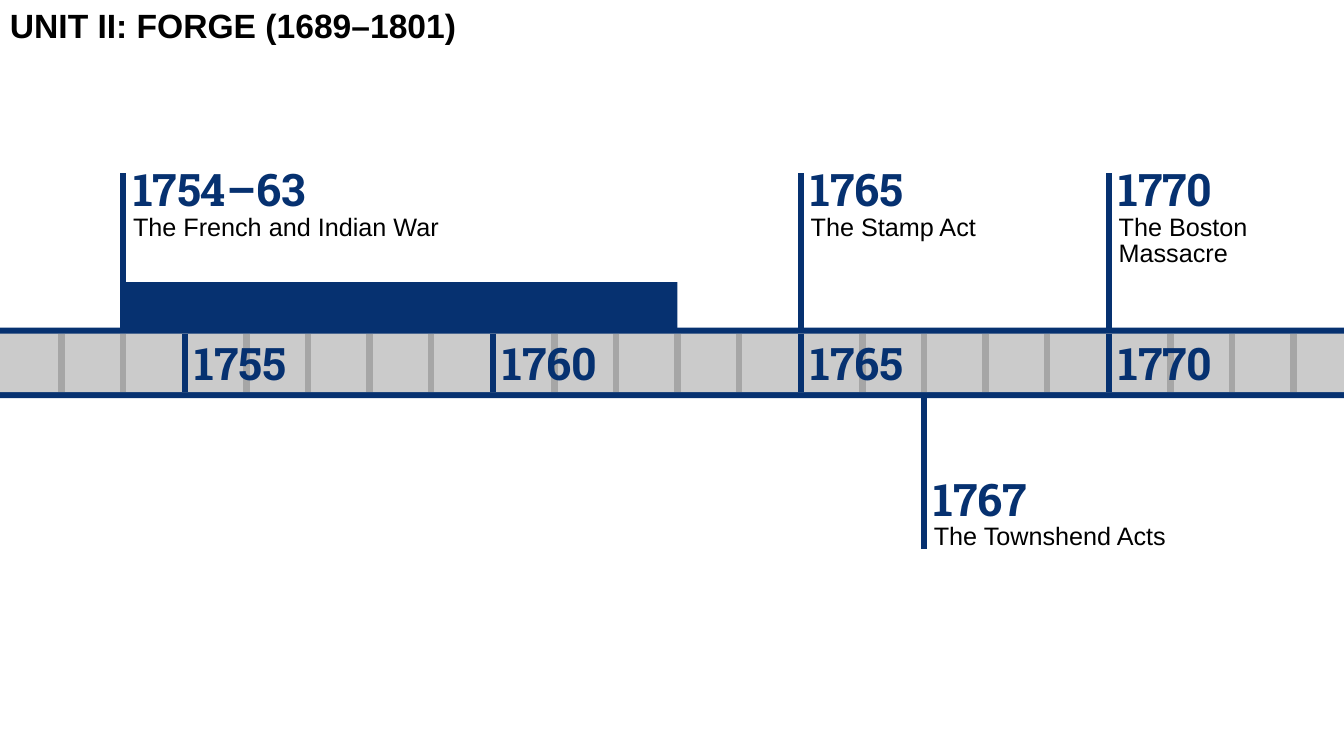
from lxml import etree
from pptx import Presentation
from pptx.dml.color import RGBColor
from pptx.enum import shapes, text
from pptx.oxml.ns import qn
from pptx.util import Pt

HUES = {"navy": "063170", "band": "CBCBCB", "tick": "A6A6A6", "ink": "000000"}
YEAR = ("Roboto Slab", 32, "navy", True)
NOTE = ("Arial", 18, "ink", False)
HEAD = ("Arial", 24, "ink", True)
WIDE, HIGH = 960, 540
START, STEP = 1752, 44
TOP, BASE = 238.3, 280.1


def place(year):
    """Horizontal position of a year on the time axis."""
    return (year - START) * STEP


class Board:
    def __init__(self, slide):
        self.items = slide.shapes

    def hue(self, name):
        return RGBColor.from_string(HUES[name])

    def bar(self, x, y, w, h, fill):
        box = self.items.add_shape(
            shapes.MSO_SHAPE.RECTANGLE, Pt(x), Pt(y), Pt(w), Pt(h))
        box.shadow.inherit = False
        box.fill.solid()
        box.fill.fore_color.rgb = self.hue(fill)
        box.line.fill.background()

    def rule(self, x, top, base, tint):
        """Vertical line at x."""
        line = self.items.add_connector(
            shapes.MSO_CONNECTOR.STRAIGHT, Pt(x), Pt(top), Pt(x), Pt(base))
        line.line.width = Pt(4.5)
        line.line.color.rgb = self.hue(tint)
        etree.SubElement(line._element.spPr, qn("a:effectLst"))

    def label(self, x, y, w, h, parts, space=None, wrap=False):
        """Text box with one paragraph for each (words, style) pair."""
        frame = self.items.add_textbox(Pt(x), Pt(y), Pt(w), Pt(h)).text_frame
        frame.word_wrap = wrap
        frame.auto_size = text.MSO_AUTO_SIZE.SHAPE_TO_FIT_TEXT
        frame.text = "\n".join(words for words, style in parts)
        for para, (words, style) in zip(frame.paragraphs, parts):
            if space:
                para.line_spacing = space
            face, size, tint, bold = style
            for run in para.runs:
                run.font.name = face
                run.font.size = Pt(size)
                run.font.bold = bold
                run.font.color.rgb = self.hue(tint)

    def event(self, year, title, note, w, h=59, below=False):
        x = place(year)
        stem, y = (280.8, 339.1) if below else (123.8, 118.1)
        self.rule(x, stem, stem + 111.6, "navy")
        self.label(x, y, w, h, [(title, YEAR), (note, NOTE)], 0.85)


def main():
    deck = Presentation()
    deck.slide_width, deck.slide_height = Pt(WIDE), Pt(HIGH)
    board = Board(deck.slides.add_slide(deck.slide_layouts[6]))

    board.bar(-3.6, 234, 974, 50.4, "navy")
    board.bar(-3.6, TOP, 974, BASE - TOP, "band")

    years = range(1753, 1774)
    for year in years:
        board.rule(place(year), TOP, BASE, "tick" if year % 5 else "navy")
    for year in years:
        if year % 5 == 0:
            board.label(place(year), 236.2, 85.7, 46, [(str(year), YEAR)])

    board.bar(place(1754), 201.6, place(1763) - place(1754), 33.8, "navy")
    board.event(1754, "1754–63", "The French and Indian War", 234.7)
    board.event(1765, "1765", "The Stamp Act", 133.9)
    board.event(1767, "1767", "The Townshend Acts", 182.2, below=True)
    board.event(1770, "1770", "The Boston\vMassacre", 107.3, 77)

    board.label(0, 0, 343.4, 36, [("UNIT II: FORGE (1689–1801)", HEAD)],
                wrap=True)
    deck.save("out.pptx")


if __name__ == "__main__":
    main()
